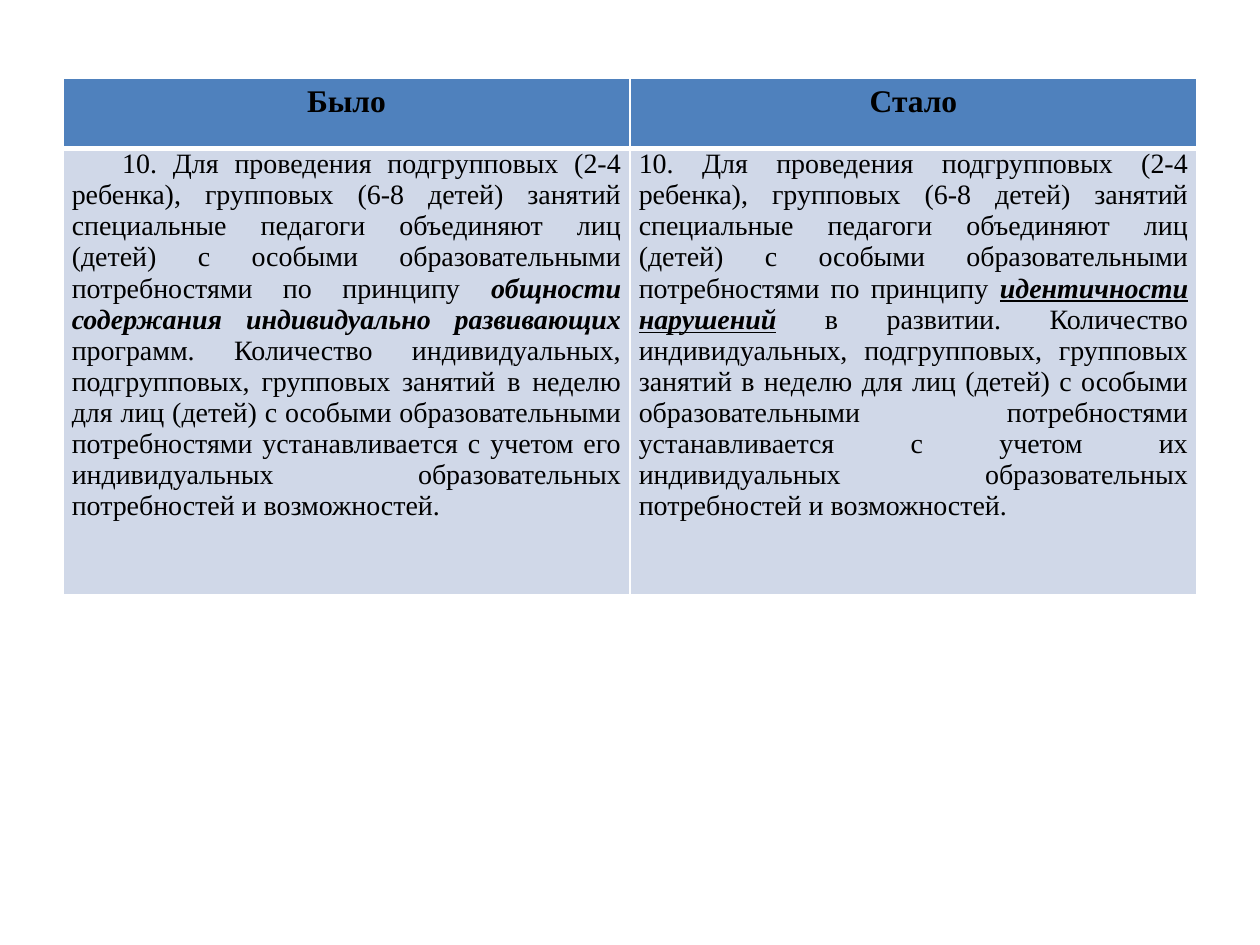
from dataclasses import dataclass

from lxml import etree
from pptx import Presentation
from pptx.dml.color import RGBColor
from pptx.enum.text import PP_ALIGN
from pptx.oxml.ns import qn
from pptx.util import Emu, Inches, Pt

CENTER, JUSTIFY = PP_ALIGN.CENTER, PP_ALIGN.JUSTIFY
FONT = "Times New Roman"
BLACK, WHITE, HEADER_FILL, BODY_FILL = "000000", "FFFFFF", "4F81BD", "D0D8E8"
THIN, THICK = 1, 3
ROW_HEIGHTS = (0.56, 3.54)

OPENING = (
    "10. Для проведения подгрупповых (2-4 ребенка), групповых (6-8 детей) занятий "
    "специальные педагоги объединяют лиц (детей) с особыми образовательными "
    "потребностями по принципу "
)
CLOSING = (
    " {subject}. Количество индивидуальных, подгрупповых, групповых занятий в неделю "
    "для лиц (детей) с особыми образовательными потребностями устанавливается "
    "с учетом {owner} индивидуальных образовательных потребностей и возможностей."
)


@dataclass
class Version:
    title: str
    principle: str
    subject: str
    owner: str
    underline: bool = False
    indent: float = 0


VERSIONS = (
    Version("Было", "общности содержания индивидуально развивающих", "программ", "его",
            indent=0.4),
    Version("Стало", "идентичности нарушений", "в развитии", "их", underline=True),
)


def rgb(color: str) -> RGBColor:
    return RGBColor.from_string(color)


def set_borders(cell, left: float, right: float, top: float, bottom: float) -> None:
    """Draw white cell borders; the widths are in points."""
    tc_pr = cell._tc.get_or_add_tcPr()
    for i, (side, width) in enumerate(zip("LRTB", (left, right, top, bottom))):
        ln = etree.Element(qn(f"a:ln{side}"), w=str(Pt(width)))
        fill = etree.SubElement(ln, qn("a:solidFill"))
        etree.SubElement(fill, qn("a:srgbClr"), val=WHITE)
        tc_pr.insert(i, ln)  # the schema puts borders ahead of the fill


def style_cell(cell, fill: str, top: float, bottom: float) -> None:
    cell.fill.solid()
    cell.fill.fore_color.rgb = rgb(fill)
    set_borders(cell, THIN, THIN, top, bottom)


def add_run(p, text: str, size: float, bold: bool = False, italic: bool = False,
            underline: bool = False) -> None:
    r = p.add_run()
    r.text = text
    font = r.font
    font.name, font.size = FONT, Pt(size)
    font.bold, font.italic, font.underline = bold, italic, underline
    font.color.rgb = rgb(BLACK)


def fill_header(cell, version: Version) -> None:
    style_cell(cell, HEADER_FILL, THIN, THICK)
    p = cell.text_frame.paragraphs[0]
    p.alignment = CENTER
    add_run(p, version.title, 18, bold=True)


def fill_body(cell, version: Version) -> None:
    style_cell(cell, BODY_FILL, THICK, THIN)
    cell.margin_left = cell.margin_right = Inches(0.07)
    cell.margin_top = cell.margin_bottom = 0
    p = cell.text_frame.paragraphs[0]
    p.alignment = JUSTIFY
    p._p.get_or_add_pPr().set("indent", str(Inches(version.indent)))
    add_run(p, OPENING, 16)
    add_run(p, version.principle, 16, bold=True, italic=True, underline=version.underline)
    add_run(p, CLOSING.format(subject=version.subject, owner=version.owner), 16)


def main() -> None:
    prs = Presentation()
    prs.slide_width, prs.slide_height = Inches(10), Inches(7.5)
    s = prs.slides.add_slide(prs.slide_layouts[6])

    margin = Emu(int(prs.slide_width * 0.05))
    table = s.shapes.add_table(
        len(ROW_HEIGHTS), len(VERSIONS), margin, Inches(0.62),
        prs.slide_width - 2 * margin, Inches(sum(ROW_HEIGHTS)),
    ).table
    for row, height in zip(table.rows, ROW_HEIGHTS):
        row.height = Inches(height)
    for col, version in enumerate(VERSIONS):
        fill_header(table.cell(0, col), version)
        fill_body(table.cell(1, col), version)

    prs.save("out.pptx")


if __name__ == "__main__":
    main()
